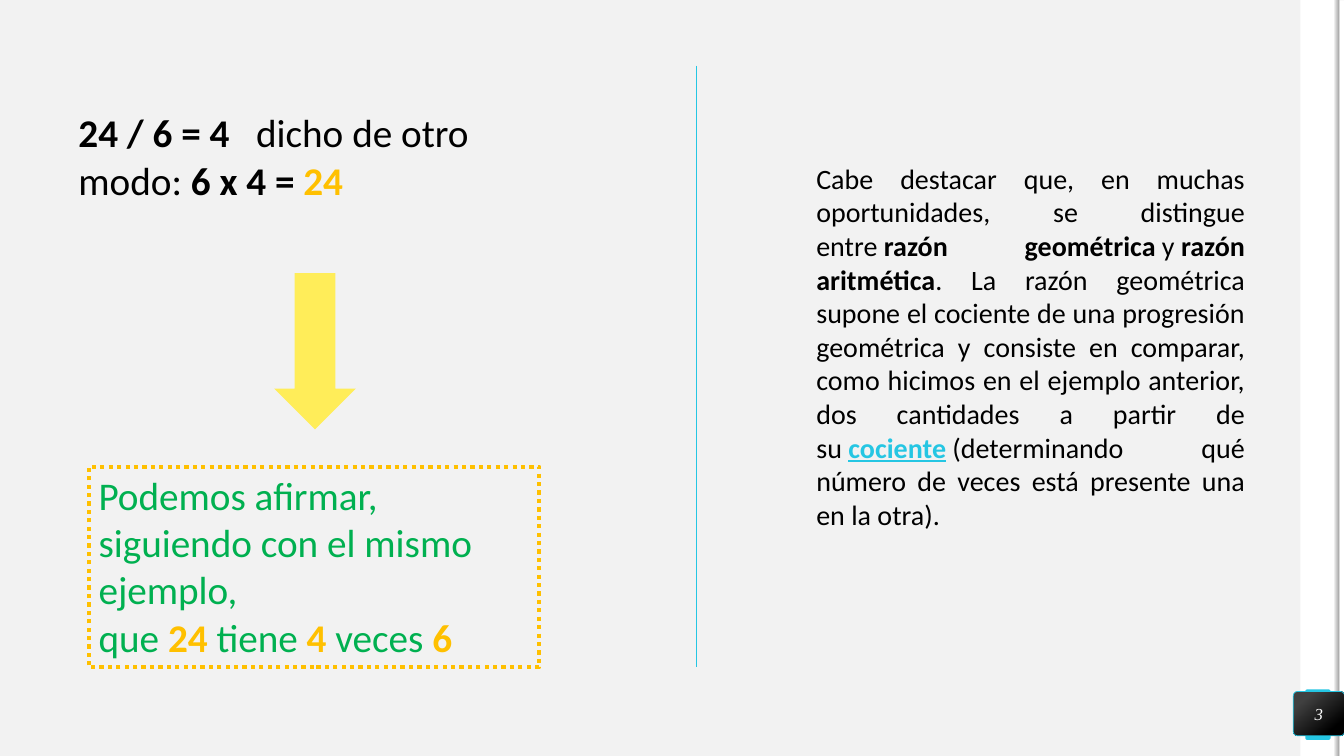
from pptx import Presentation
from pptx.dml.color import RGBColor
from pptx.enum.dml import MSO_LINE
from pptx.enum.shapes import MSO_CONNECTOR, MSO_SHAPE
from pptx.enum.text import MSO_ANCHOR, MSO_AUTO_SIZE, PP_ALIGN
from pptx.oxml.ns import qn
from pptx.util import Inches, Pt

RECT = MSO_SHAPE.RECTANGLE
ROUND = MSO_SHAPE.ROUNDED_RECTANGLE
ARROW = MSO_SHAPE.DOWN_ARROW
STRAIGHT = MSO_CONNECTOR.STRAIGHT
DOTS = MSO_LINE.ROUND_DOT
TOP, MIDDLE = MSO_ANCHOR.TOP, MSO_ANCHOR.MIDDLE
GROW = MSO_AUTO_SIZE.SHAPE_TO_FIT_TEXT
LEFT, CENTER, JUSTIFY = PP_ALIGN.LEFT, PP_ALIGN.CENTER, PP_ALIGN.JUSTIFY

BLACK, WHITE, CYAN = "000000", "FFFFFF", "25C6E3"
GOLD, GREEN, YELLOW = "FFC000", "00B050", "FFED59"
PAPER = "F2F2F2"
HARD = chr(160)  # no-break space, typed as ~ in the texts below


def color(code):
    return RGBColor.from_string(code)


def add_box(slide, kind, at, fill=None, line=None, width=0.5, turn=0, round=None):
    box = slide.shapes.add_shape(kind, *map(Inches, at))
    box.shadow.inherit = False
    box.rotation = turn
    if round is not None:
        box.adjustments[0] = round
    if fill:
        box.fill.solid()
        box.fill.fore_color.rgb = color(fill)
    else:
        box.fill.background()
    if line:
        box.line.color.rgb = color(line)
        box.line.width = Pt(width)
    else:
        box.line.fill.background()
    return box


def shade(box, angle, *stops):
    """Fill with a gradient; the angle runs counter-clockwise."""
    box.fill.gradient()
    box.fill.gradient_angle = angle
    for stop, (place, code) in zip(box.fill.gradient_stops, stops):
        stop.position = place
        stop.color.rgb = color(code)


def write(shape, size, runs, align=LEFT, font="Calibri"):
    """Add runs given as (text, colour, styles), styles being letters of b, i, u."""
    frame = shape.text_frame
    frame.word_wrap = True
    para = frame.paragraphs[0]
    para.alignment = align
    for text, code, style in runs:
        run = para.add_run()
        run.text = text.replace("~", HARD)
        run.font.name = font
        run.font.size = Pt(size)
        run.font.color.rgb = color(code)
        run.font.bold = "b" in style
        run.font.italic = "i" in style
        run.font.underline = "u" in style
    return frame


def add_text(slide, at, size, runs, align=LEFT):
    box = slide.shapes.add_textbox(*map(Inches, at))
    write(box, size, runs, align).auto_size = GROW


def add_line(slide, start, end, code, width):
    line = slide.shapes.add_connector(STRAIGHT, *map(Inches, start + end))
    line.line.color.rgb = color(code)
    line.line.width = Pt(width)
    props = line._element.spPr
    props.append(props.makeelement(qn("a:effectLst"), {}))


def add_edge(slide):
    """Draw the right-hand strip and the page number."""
    add_box(slide, RECT, (12.9, 0, 0.39, 7.5), WHITE)
    add_box(slide, ROUND, (12.95, 6.84, 0.25, 0.5), CYAN, round=0.07)
    add_box(slide, RECT, (9.56, 3.73, 7.5, 0.05), WHITE, turn=90)
    rim = add_box(slide, RECT, (9.51, 3.73, 7.5, 0.05), turn=90)
    shade(rim, 90, (0, PAPER), (1, "A6A6A6"))
    badge = add_box(slide, ROUND, (12.83, 6.86, 0.51, 0.44), line=CYAN, round=0.1)
    shade(badge, 310, (0.2, "404040"), (0.82, BLACK))
    frame = write(badge, 12, [("3", WHITE, "i")], CENTER, "Times New Roman")
    frame.vertical_anchor = MIDDLE
    frame.margin_left = frame.margin_right = 0
    frame.margin_top = frame.margin_bottom = 0


def main():
    deck = Presentation()
    deck.slide_width, deck.slide_height = Inches(40 / 3), Inches(7.5)
    slide = deck.slides.add_slide(deck.slide_layouts[6])
    slide.background.fill.solid()
    slide.background.fill.fore_color.rgb = color(PAPER)
    add_edge(slide)

    add_text(slide, (0.68, 1.03, 5.18, 1.04), 28, [
        ("24 / 6 = 4", BLACK, "b"),
        ("~  dicho de otro modo:~", BLACK, ""),
        ("6 x 4 = ", BLACK, "b"),
        ("24", GOLD, "b"),
    ])
    claim = add_box(slide, RECT, (0.88, 4.63, 4.47, 1.99), line=GOLD, width=3)
    claim.line.dash_style = DOTS
    frame = write(claim, 28, [
        ("Podemos afirmar, siguiendo con el mismo ejemplo, que~", GREEN, ""),
        ("24~", GOLD, "b"),
        ("tiene~", GREEN, ""),
        ("4", GOLD, "b"),
        ("~veces~", GREEN, ""),
        ("6", GOLD, "b"),
    ])
    frame.vertical_anchor = TOP
    frame.auto_size = GROW
    add_box(slide, ARROW, (2.72, 2.71, 0.81, 1.55), YELLOW)
    add_text(slide, (8, 1.55, 4.45, 3.8), 20, [
        ("Cabe destacar que, en muchas oportunidades, se distingue entre~", BLACK, ""),
        ("razón geométrica", BLACK, "b"),
        ("~y~", BLACK, ""),
        ("razón aritmética", BLACK, "b"),
        (". La razón geométrica supone el cociente de una progresión "
         "geométrica y consiste en comparar, como hicimos en el ejemplo "
         "anterior, dos cantidades a partir de su~", BLACK, ""),
        ("cociente", CYAN, "bu"),
        ("~(determinando qué número de veces está presente una en la otra).",
         BLACK, ""),
    ], JUSTIFY)
    add_line(slide, (6.91, 0.65), (6.91, 6.62), CYAN, 0.5)
    deck.save("out.pptx")


if __name__ == "__main__":
    main()
